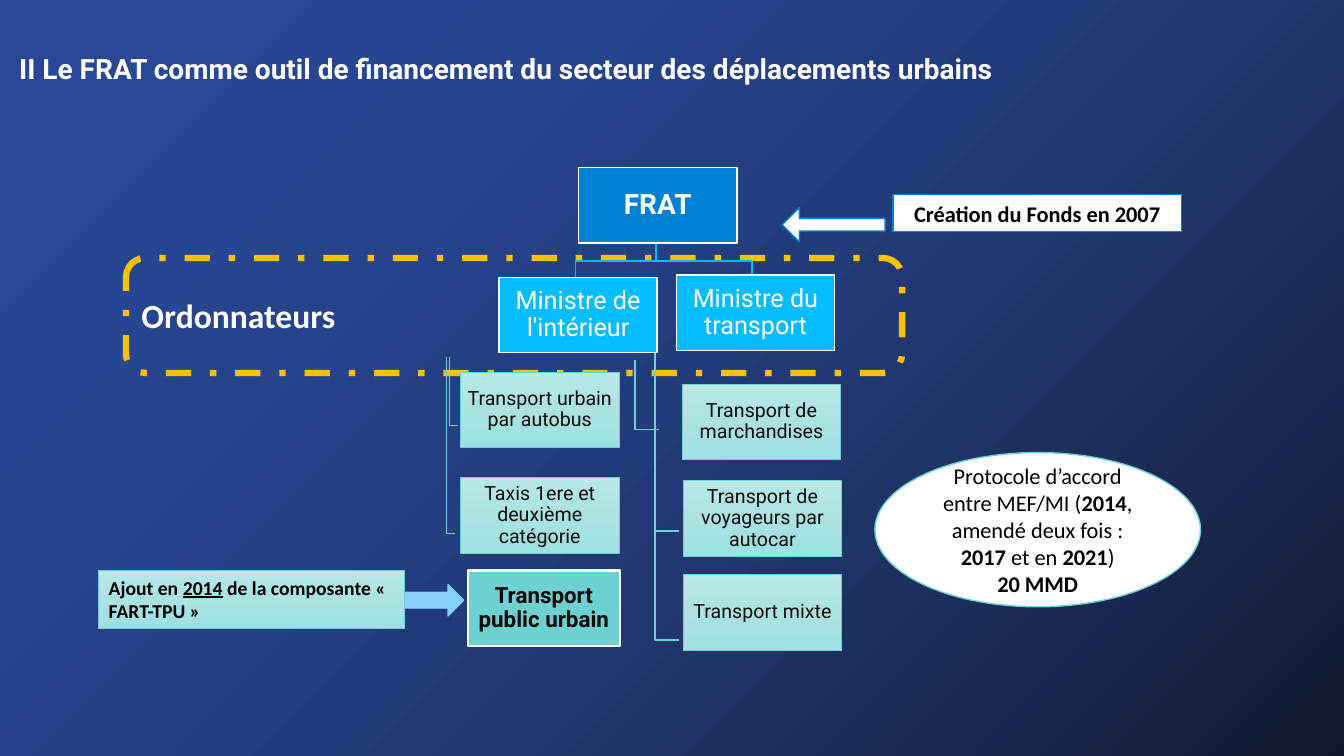
from lxml import etree
from pptx import Presentation, util as u
from pptx.dml.color import RGBColor
from pptx.enum import dml, shapes, text
from pptx.oxml.ns import qn

NAVY = RGBColor(0x28, 0x48, 0x96)
BLACK = RGBColor(0x00, 0x00, 0x00)
INK = RGBColor(0x0A, 0x0A, 0x0A)
WHITE = RGBColor(0xFF, 0xFF, 0xFF)
AMBER = RGBColor(0xFF, 0xC0, 0x00)
BLUE = RGBColor(0x00, 0x82, 0xD2)
CYAN = RGBColor(0x05, 0xBC, 0xFF)
SKY = RGBColor(0x87, 0xD1, 0xFF)
TEAL = RGBColor(0x6D, 0xD1, 0xD1)
MINT = [(0, RGBColor(0xB8, 0xE8, 0xE8)), (50, RGBColor(0xAB, 0xE2, 0xE2)),
        (100, RGBColor(0x9C, 0xE1, 0xE1))]

CELL = u.Inches(0.1)  # side of one grid cell
COLS, ROWS = 133.33, 75
BOX_W, BOX_H = 15.7, 7.5
FORK_ROW, MINISTRY_ROW = 25.9, 27.5
KIND = shapes.MSO_SHAPE
LEFT, CENTER = text.PP_ALIGN.LEFT, text.PP_ALIGN.CENTER


def grid(*cells):
    return [round(c * CELL) for c in cells]


def set_gradient(fill, owner, stops, angle):
    """Fill with (percent, colour) stops; angle is counter-clockwise."""
    fill.gradient()
    fill.gradient_angle = angle
    gs_list = next(owner.iter(qn("a:gsLst")))
    for old in list(gs_list):
        gs_list.remove(old)
    for pos, color in stops:
        gs = etree.SubElement(gs_list, qn("a:gs"), pos=str(pos * 1000))
        etree.SubElement(gs, qn("a:srgbClr"), val=str(color))


def paint_background(s):
    """Darken towards the bottom right corner, slowly at first."""
    stops = []
    for pos in range(0, 101, 10):
        share = 0.77 * (pos / 100) ** 2
        mix = [round(a + (b - a) * share) for a, b in zip(NAVY, INK)]
        stops.append((pos, RGBColor(*mix)))
    set_gradient(s.background.fill, s.background._cSld, stops, 315)


def add_run(p, words, font, size, color, bold=False, underline=False):
    r = p.add_run()
    r.text = words
    f = r.font
    f.name, f.size, f.bold = font, u.Pt(size), bold
    f.color.rgb = color
    if underline:
        f.underline = True


def add_title(s, words):
    sp = s.shapes.title
    sp.left, sp.top, sp.width, sp.height = grid(1.9, 4, 128.5, 9.4)
    tf = sp.text_frame
    tf.margin_left = tf.margin_right = tf.margin_top = tf.margin_bottom = 0
    tf.vertical_anchor = text.MSO_ANCHOR.TOP
    p = tf.paragraphs[0]
    p.alignment, p.line_spacing = LEFT, u.Pt(32)
    add_run(p, words, "Roboto", 20, WHITE, True)


def add_block(s, kind, place, fill, line, weight=1):
    sp = s.shapes.add_shape(kind, *grid(*place))
    sp.shadow.inherit = False
    if fill is None:
        sp.fill.background()
    elif isinstance(fill, list):
        set_gradient(sp.fill, sp._element, fill, 270)
    else:
        sp.fill.solid()
        sp.fill.fore_color.rgb = fill
    sp.line.color.rgb = line
    sp.line.width = u.Pt(weight)
    return sp


def write(sp, paragraphs, size, color, font="Calibri", align=CENTER):
    """Each paragraph is a list of (words, bold, underline) runs."""
    tf = sp.text_frame
    tf.word_wrap = True
    tf.vertical_anchor = text.MSO_ANCHOR.MIDDLE
    for i, runs in enumerate(paragraphs):
        p = tf.add_paragraph() if i else tf.paragraphs[0]
        p.alignment = align
        for words, *style in runs:
            add_run(p, words, font, size, color, *style)


def add_box(s, col, row, words, fill, line, size, color, bold=False, weight=1, width=BOX_W):
    sp = add_block(s, KIND.RECTANGLE, (col, row, width, BOX_H), fill, line, weight)
    write(sp, [[(words, bold)]], size, color, "Roboto")
    tf = sp.text_frame
    tf.margin_left = tf.margin_right = tf.margin_top = tf.margin_bottom = u.Inches(0.01)
    tf.paragraphs[0].line_spacing = 0.9


def add_branch(s, color, *points):
    start, *rest = [grid(*pt) for pt in points]
    builder = s.shapes.build_freeform(*start)
    builder.add_line_segments(rest, close=False)
    sp = builder.convert_to_shape()
    sp.shadow.inherit = False
    sp.fill.background()
    sp.line.color.rgb = color
    sp.line.width = u.Pt(1)


def add_chart_tree(s):
    for col, top, row, end in [(65, 35.1, 63.5, 67.4), (65, 35, 52.7, 67.4),
                               (63, 35.7, 42.6, 65.4), (44.3, 35.4, 52.9, 45.1),
                               (44.6, 35.4, 42.2, 45.4)]:
        add_branch(s, TEAL, (col, top), (col, row), (end, row))
    for col in (74.6, 57.1):
        add_branch(s, CYAN, (65.1, 24.2), (65.1, FORK_ROW), (col, FORK_ROW),
                   (col, MINISTRY_ROW))

    add_box(s, 57.4, 16.6, "FRAT", BLUE, WHITE, 20, WHITE, True)
    for col, row, words in [(49.5, 27.5, "Ministre de l'intérieur"),
                            (67.1, 27.3, "Ministre du transport")]:
        add_box(s, col, row, words, CYAN, WHITE, 18, WHITE)
    for col, row, words in [(45.7, 36.9, "Transport urbain par autobus"),
                            (45.7, 47.4, "Taxis 1ere et deuxième catégorie"),
                            (67.7, 38.1, "Transport de marchandises"),
                            (67.8, 47.7, "Transport de voyageurs par autocar"),
                            (67.8, 57, "Transport mixte")]:
        add_box(s, col, row, words, MINT, TEAL, 14, INK, weight=0.5)


def add_notes_around(s):
    sp = add_block(s, KIND.RECTANGLE, (88.6, 19.3, 28.6, 3.7), WHITE, BLUE)
    write(sp, [[("Création du Fonds en 2007", True)]], 16, BLACK)
    sp = add_block(s, KIND.LEFT_ARROW, (77.6, 20.6, 10.2, 3.4), WHITE, BLUE)
    sp.adjustments[0] = 0.37

    sp = add_block(s, KIND.RECTANGLE, (9.8, 56.6, 30.3, 5.7), MINT, TEAL, 0.5)
    write(sp, [[("Ajout en ", True), ("2014", True, True),
                (" de la composante « FART-TPU »", True)]], 14, BLACK, align=LEFT)

    sp = add_block(s, KIND.OVAL, (86.8, 44.9, 32.3, 15.3), WHITE, TEAL)
    write(sp, [[("Protocole d’accord entre MEF/MI (",), ("2014", True),
                (", amendé deux fois : ",), ("2017", True), (" et en ",),
                ("2021", True), (")",)],
               [("20 MMD", True)]], 16, BLACK)

    add_box(s, 46.4, 56.6, "Transport public urbain", TEAL, WHITE, 16, INK, True, 1.5, 15.1)
    add_block(s, KIND.RIGHT_ARROW, (40.2, 58, 5.8, 3.1), SKY, SKY)


def main():
    prs = Presentation()
    prs.slide_width, prs.slide_height = grid(COLS, ROWS)
    s = prs.slides.add_slide(prs.slide_layouts[5])
    paint_background(s)
    add_title(s, "II Le FRAT comme outil de financement du secteur des déplacements urbains")
    frame = add_block(s, KIND.ROUNDED_RECTANGLE, (12.5, 25.6, 77, 11.4), None, AMBER, 4.5)
    frame.line.dash_style = dml.MSO_LINE.DASH_DOT
    write(frame, [[("Ordonnateurs", True)]], 24, WHITE, align=LEFT)
    add_chart_tree(s)
    add_notes_around(s)
    prs.save("out.pptx")


if __name__ == "__main__":
    main()
